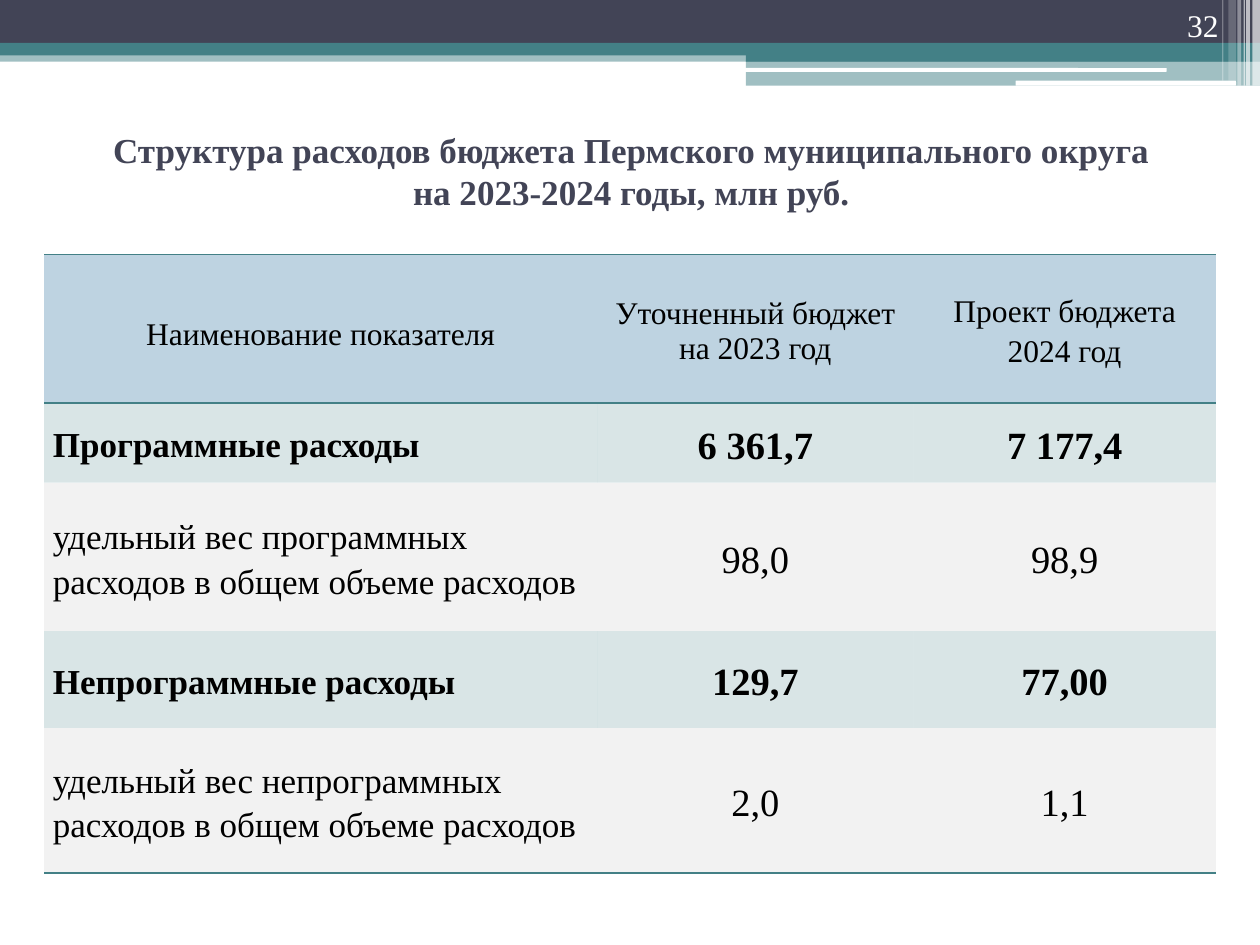
from lxml import etree
from pptx import Presentation
from pptx.enum import shapes, text
from pptx.oxml import parse_xml
from pptx.oxml.ns import nsdecls, qn
from pptx.util import Inches, Pt
from pptx.dml.color import RGBColor

NAVY, TEAL, WHITE, BLACK = "424456", "438086", "FFFFFF", "000000"
HEADER_BLUE, LIGHT_GREY = "BED3E1", "F2F2F2"
CENTER = text.PP_ALIGN.CENTER
MIDDLE = text.MSO_ANCHOR.MIDDLE


def paint(fill, color, opacity=100):
    fill.solid()
    fill.fore_color.rgb = RGBColor.from_string(color)
    if opacity < 100:
        rgb = fill._xPr.find(qn("a:solidFill"))[0]
        etree.SubElement(rgb, qn("a:alpha"), val=str(opacity * 1000))


def write(frame, lines, size=18, color=BLACK, bold=False, align=None,
          anchor=MIDDLE, spacing=None, after=0):
    frame.word_wrap = True
    frame.vertical_anchor = anchor
    for index, line in enumerate(lines):
        paragraph = frame.add_paragraph() if index else frame.paragraphs[0]
        paragraph.text = line
        paragraph.alignment = align
        paragraph.line_spacing = spacing
        paragraph.space_after = Pt(after)
        for run in paragraph.runs:
            run.font.name = "Times New Roman"
            run.font.size = Pt(size)
            run.font.bold = bold
            paint(run.font.fill, color)


presentation = Presentation()
presentation.slide_width = Inches(10)
presentation.slide_height = Inches(7.5)
slide = presentation.slides.add_slide(presentation.slide_layouts[5])

# Top banner: left, top, width, height, colour, opacity, rounded
banner = [
    (0, 0.4, 10, 0.09, TEAL, 50, False),
    (0, 0, 10, 0.34, NAVY, 100, False),
    (0, 0.34, 10, 0.1, TEAL, 100, False),
    (5.92, 0.39, 4.08, 0.1, TEAL, 100, False),
    (5.92, 0.48, 4.08, 0.2, TEAL, 50, False),
    (5.91, 0.54, 3.35, 0.03, WHITE, 100, True),
    (8.06, 0.64, 1.75, 0.04, WHITE, 100, True),
    (9.94, 0, 0.06, 0.68, WHITE, 65, False),
    (9.89, 0, 0.03, 0.68, WHITE, 65, False),
    (9.87, 0, 0.01, 0.68, WHITE, 60, False),
    (9.82, 0, 0.03, 0.68, WHITE, 40, False),
    (9.75, 0, 0.06, 0.64, WHITE, 20, False),
    (9.7, 0, 0.01, 0.64, WHITE, 30, False),
]
for left, top, width, height, color, opacity, rounded in banner:
    kind = shapes.MSO_SHAPE.ROUNDED_RECTANGLE if rounded else shapes.MSO_SHAPE.RECTANGLE
    shape = slide.shapes.add_shape(
        kind, Inches(left), Inches(top), Inches(width), Inches(height))
    shape.shadow.inherit = False
    shape.line.fill.background()
    paint(shape.fill, color, opacity)

# Title
title = slide.shapes.title
title.left, title.top = Inches(0.51), Inches(0.84)
title.width, title.height = Inches(9), Inches(1.02)
title.text_frame.auto_size = text.MSO_AUTO_SIZE.NONE
write(title.text_frame,
      ["Структура расходов бюджета Пермского муниципального округа\v"
       "на 2023-2024 годы, млн руб."],
      size=20, color=NAVY, bold=True, align=CENTER)

# Budget table
rows = [
    ("Наименование показателя", "Уточненный бюджет\nна 2023 год", "Проект бюджета\n2024 год"),
    ("Программные расходы", "6 361,7", "7 177,4"),
    ("удельный вес программных расходов в общем объеме расходов", "98,0", "98,9"),
    ("Непрограммные расходы", "129,7", "77,00"),
    ("удельный вес непрограммных расходов в общем объеме расходов", "2,0", "1,1"),
]
table = slide.shapes.add_table(
    len(rows), 3, Inches(0.35), Inches(2.02), Inches(9.3), Inches(4.91)).table
table.first_row = table.horz_banding = False
no_style = "{2D5ABB26-0587-4C30-8999-92F81FD0307C}"
table._tbl.tblPr.find(qn("a:tableStyleId")).text = no_style
for column, width in zip(table.columns, (4.39, 2.51, 2.4)):
    column.width = Inches(width)
for row, height in zip(table.rows, (1.18, 0.63, 1.18, 0.77, 1.15)):
    row.height = Inches(height)

for row_index, values in enumerate(rows):
    is_header = row_index == 0
    is_total = row_index % 2 == 1
    edges = {0: ("lnT", "lnB"), len(rows) - 1: ("lnB",)}.get(row_index, ())
    for column_index, value in enumerate(values):
        cell = table.cell(row_index, column_index)
        is_label = column_index == 0
        cell.margin_left = cell.margin_right = Inches(0.07)
        cell.margin_top = cell.margin_bottom = 0
        for edge in edges:
            cell._tc.get_or_add_tcPr().append(parse_xml(
                f'<a:{edge} {nsdecls("a")} w="12700"><a:solidFill>'
                f'<a:srgbClr val="{TEAL}"/></a:solidFill></a:{edge}>'))
        if is_header:
            paint(cell.fill, HEADER_BLUE)
        elif is_total:
            paint(cell.fill, TEAL, 20)
        else:
            paint(cell.fill, LIGHT_GREY)
        write(cell.text_frame, value.split("\n"),
              size=18 if is_header else 20 if is_label else 22,
              bold=is_total, spacing=1.15,
              align=None if is_label and not is_header else CENTER,
              after=0 if is_header or is_label else 10)
        cell.vertical_anchor = MIDDLE
table.cell(0, 0).margin_top = Inches(0.06)
table.cell(0, 1).text_frame.paragraphs[1].line_spacing = 1

# Slide number
number = slide.shapes.add_textbox(Inches(8.94), 0, Inches(0.83), Inches(0.4))
write(number.text_frame, ["32"], color=WHITE, align=text.PP_ALIGN.RIGHT,
      anchor=text.MSO_ANCHOR.BOTTOM)

presentation.save("out.pptx")
